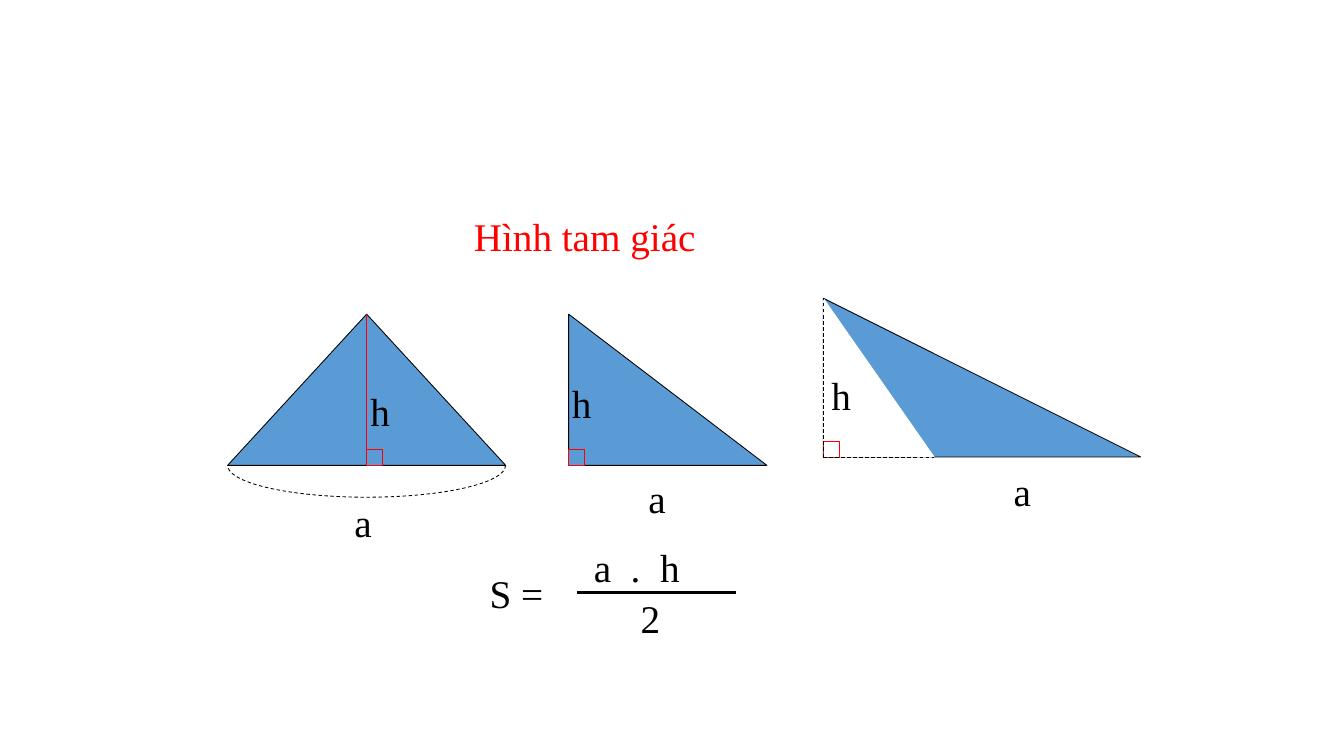
from lxml import etree
from pptx import Presentation
from pptx.dml.color import RGBColor
from pptx.enum.dml import MSO_LINE
from pptx.enum.shapes import MSO_CONNECTOR, MSO_SHAPE as Kind
from pptx.enum.text import MSO_ANCHOR, PP_ALIGN
from pptx.oxml.ns import qn
from pptx.util import Inches, Pt

BLUE, RED, BLACK, WHITE = "5B9BD5", "FF0000", "000000", "FFFFFF"
FONT, SIZE = "Times New Roman", 33.6
MARK = 0.19


def paint(color, code):
    color.rgb = RGBColor.from_string(code)


def stroke(line, code, width=0.75, dash=False):
    paint(line.color, code)
    line.width = Pt(width)
    if dash:
        line.dash_style = MSO_LINE.DASH


def add_form(slide, kind, box, fill, edge, dash=False):
    form = slide.shapes.add_shape(kind, *map(Inches, box))
    form.shadow.inherit = False
    if fill:
        form.fill.solid()
        paint(form.fill.fore_color, fill)
    else:
        form.fill.background()
    stroke(form.line, edge, dash=dash)
    return form


def add_line(slide, start, end, code, width=0.75, dash=False):
    line = slide.shapes.add_connector(
        MSO_CONNECTOR.STRAIGHT, *map(Inches, start + end))
    stroke(line.line, code, width, dash)
    etree.SubElement(line._element.spPr, qn("a:effectLst"))


def add_run(para, text, code=BLACK):
    run = para.add_run()
    run.text = text
    run.font.name = FONT
    run.font.size = Pt(SIZE)
    paint(run.font.color, code)
    return run


def set_frame(shape):
    """Prepare a text frame and return its first paragraph."""
    frame = shape.text_frame
    frame.word_wrap = True
    frame.vertical_anchor = MSO_ANCHOR.TOP
    frame.margin_top, frame.margin_bottom = Inches(0.11), Inches(0.02)
    para = frame.paragraphs[0]
    para.alignment = PP_ALIGN.LEFT
    return para


def add_box(slide, left, top, width):
    box = slide.shapes.add_textbox(*map(Inches, (left, top, width, 0.67)))
    return set_frame(box)


def add_title(slide, text):
    title = slide.shapes.title
    title.left, title.top = Inches(5.54), Inches(2.42)
    title.width, title.height = Inches(5.2), Inches(0.67)
    add_run(set_frame(title), text, RED)


def add_product(slide):
    """Write the numerator with wide gaps around the dot."""
    para = add_box(slide, 6.97, 6.36, 1.79)
    for char in "a . h":
        run = add_run(para, char)
        if char == " ":
            run.font._element.set("spc", "840")


def main():
    prs = Presentation()
    prs.slide_width, prs.slide_height = Inches(16), Inches(9)
    slide = prs.slides.add_slide(prs.slide_layouts[5])
    add_title(slide, "Hình tam giác")

    base, apex, foot = 5.54, 3.74, 4.36
    corner, peak, floor = 9.8, 3.55, 5.44
    for kind, box, fill, edge in [
        (Kind.RIGHT_TRIANGLE, (6.77, apex, 2.36, base - apex), BLUE, BLACK),
        (Kind.ISOSCELES_TRIANGLE, (2.71, apex, 3.31, base - apex), BLUE, BLACK),
        (Kind.RIGHT_TRIANGLE, (corner, peak, 3.78, floor - peak), BLUE, BLACK),
        (Kind.RIGHT_TRIANGLE, (corner, peak, 1.32, floor - peak), WHITE, WHITE),
    ]:
        add_form(slide, kind, box, fill, edge)

    add_line(slide, (foot, apex), (foot, base), RED)
    for left, low, fill in [(foot, base, BLUE), (6.77, base, BLUE),
                            (corner, floor, WHITE)]:
        add_form(slide, Kind.RECTANGLE, (left, low - MARK, MARK, MARK), fill, RED)

    arc = add_form(slide, Kind.ARC, (2.71, base - 0.38, 3.31, 0.76),
                   None, BLACK, dash=True)
    arc.adjustments[0] = 0
    arc.adjustments[1] = 180 * 0.6  # half turn, 0.6 units per degree

    for text, left, top, width in [
        ("a", 4.12, 5.82, 0.47), ("h", 4.31, 4.5, 0.47),
        ("h", 6.71, 4.41, 0.47), ("a", 7.62, 5.54, 0.47),
        ("a", 11.97, 5.45, 0.47), ("h", 9.8, 4.31, 0.75),
        ("S =", 5.73, 6.67, 1.23), ("2", 7.53, 6.96, 0.76),
    ]:
        add_run(add_box(slide, left, top, width), text)
    add_product(slide)
    add_line(slide, (6.87, 7.05), (8.76, 7.05), BLACK, 2.25)

    for end in [(corner, peak), (corner + 1.32, floor)]:
        add_line(slide, (corner, floor), end, BLACK, dash=True)

    prs.save("out.pptx")


if __name__ == "__main__":
    main()
